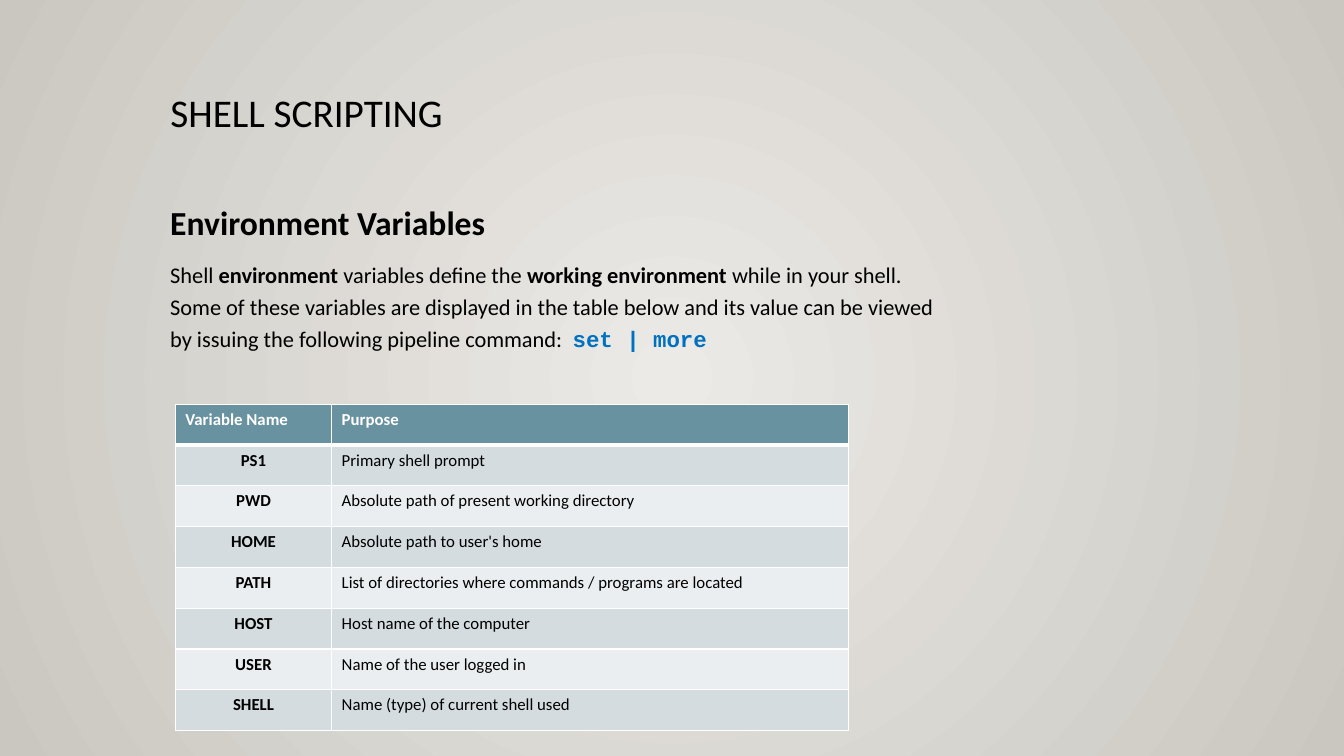
import pptx
import pptx.util
import pptx.dml.color
import pptx.enum.text
import pptx.oxml
import pptx.oxml.ns

W, H = 13.33, 7.5
LEFT = 11.93
ROW_H = 5.4
COLS = (11.63, 38.48)
COLORS = {
    "center": "ECEAE7", "edge": "CAC7C1", "ink": "000000", "command": "0070C0",
    "white": "FFFFFF", "header": "6892A0", "odd": "D4DCDF", "even": "EBEEF0",
}
VARIABLES = [
    ("Variable Name", "Purpose"),
    ("PS1", "Primary shell prompt"),
    ("PWD", "Absolute path of present working directory"),
    ("HOME", "Absolute path to user's home"),
    ("PATH", "List of directories where commands / programs are located"),
    ("HOST", "Host name of the computer"),
    ("USER", "Name of the user logged in"),
    ("SHELL", "Name (type) of current shell used"),
]


def x(percent):
    """Return a share of the slide width."""
    return pptx.util.Inches(W * percent / 100)


def y(percent):
    """Return a share of the slide height."""
    return pptx.util.Inches(H * percent / 100)


def rgb(name):
    """Return a named colour."""
    return pptx.dml.color.RGBColor.from_string(COLORS[name])


def add_text(p, text, size=16, bold=False, color="ink", font="Calibri"):
    """Add formatted text to a paragraph, breaking at newlines."""
    for i, line in enumerate(text.split("\n")):
        if i:
            p.add_line_break()
        r = p.add_run()
        r.text = line
        r.font.size = pptx.util.Pt(size)
        r.font.bold = bold
        r.font.name = font
        r.font.color.rgb = rgb(color)


def set_background(s):
    """Fill the background with a gradient spreading from the centre."""
    fill = s.background.fill
    fill.gradient()
    for stop, name in zip(fill.gradient_stops, ("center", "edge")):
        stop.color.rgb = rgb(name)
    grad = s._element.find(".//" + pptx.oxml.ns.qn("a:gradFill"))
    grad.replace(grad.find(pptx.oxml.ns.qn("a:lin")), pptx.oxml.parse_xml(
        f'<a:path {pptx.oxml.ns.nsdecls("a")} path="circle">'
        '<a:fillToRect l="50000" t="50000" r="50000" b="50000"/></a:path>'))


def add_title(s, text):
    """Place and format the title."""
    sp = s.shapes.title
    sp.left, sp.top, sp.width, sp.height = x(LEFT), y(11.73), x(78.77), y(15.33)
    tf = sp.text_frame
    tf.auto_size = pptx.enum.text.MSO_AUTO_SIZE.NONE
    tf.vertical_anchor = pptx.enum.text.MSO_ANCHOR.TOP
    p = tf.paragraphs[0]
    p.alignment = pptx.enum.text.PP_ALIGN.LEFT
    p.line_spacing = 0.9
    add_text(p, text, size=28)


def add_body(s):
    """Add the heading and the introduction."""
    tf = s.shapes.add_textbox(x(LEFT), y(24.93), x(77.27), y(69.33)).text_frame
    tf.word_wrap = True
    heading, intro = tf.paragraphs[0], tf.add_paragraph()
    heading.line_spacing = intro.line_spacing = 1.2
    intro.space_before = pptx.util.Pt(10)
    add_text(heading, "Environment Variables", size=24, bold=True)
    add_text(intro, "Shell ")
    add_text(intro, "environment", bold=True)
    add_text(intro, " variables define the ")
    add_text(intro, "working environment ", bold=True)
    add_text(intro, "while in your shell. \n"
             "Some of these variables are displayed in the table below and its value can be viewed \n"
             "by issuing the following pipeline command:  ")
    add_text(intro, "set | more", bold=True, color="command", font="Courier New")


def set_borders(cell, **widths):
    """Draw white borders on a cell, one point wide unless given."""
    tc_pr = cell._tc.get_or_add_tcPr()
    for i, side in enumerate("LRTB"):
        width = pptx.util.Pt(widths.get(side, 1))
        tc_pr.insert(i, pptx.oxml.parse_xml(
            f'<a:ln{side} {pptx.oxml.ns.nsdecls("a")} w="{width}"><a:solidFill>'
            f'<a:srgbClr val="{COLORS["white"]}"/></a:solidFill></a:ln{side}>'))


def add_variable_table(s):
    """Add the table of environment variables."""
    table = s.shapes.add_table(len(VARIABLES), len(COLS), x(13.05), y(53.47),
                               x(sum(COLS)), y(ROW_H * len(VARIABLES))).table
    for column, width in zip(table.columns, COLS):
        column.width = x(width)
    for i, row in enumerate(VARIABLES):
        table.rows[i].height = y(ROW_H)
        fill = "header" if i == 0 else "odd" if i % 2 else "even"
        for j, text in enumerate(row):
            cell = table.cell(i, j)
            cell.fill.solid()
            cell.fill.fore_color.rgb = rgb(fill)
            set_borders(cell, T=3 if i == 1 else 1, B=3 if i == 0 else 1)
            p = cell.text_frame.paragraphs[0]
            if i and j == 0:
                p.alignment = pptx.enum.text.PP_ALIGN.CENTER
            add_text(p, text, size=12, bold=i == 0 or j == 0,
                     color="ink" if i else "white")


def main():
    """Build and save the slide."""
    prs = pptx.Presentation()
    prs.slide_width, prs.slide_height = x(100), y(100)
    s = prs.slides.add_slide(prs.slide_layouts[5])
    set_background(s)
    add_title(s, "SHELL SCRIPTING")
    add_body(s)
    add_variable_table(s)
    prs.save("out.pptx")


if __name__ == "__main__":
    main()
